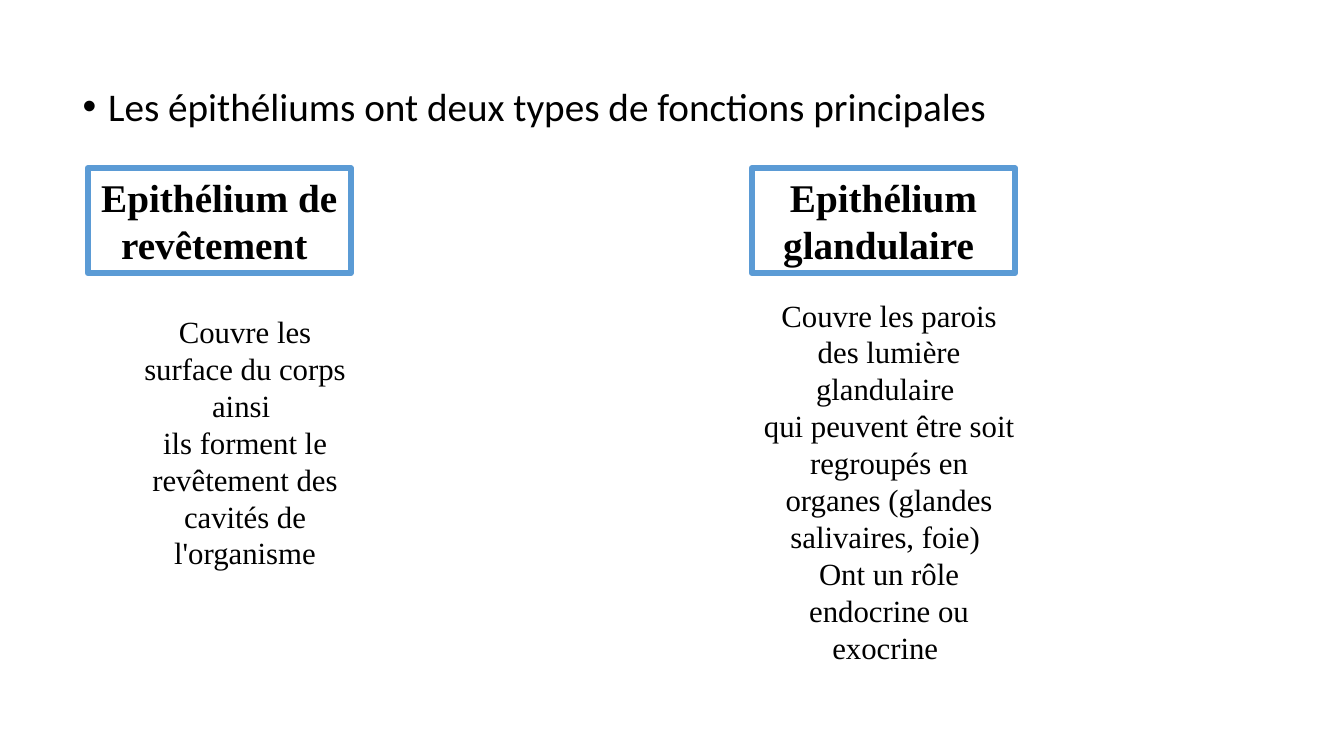
"""Build a slide that compares the two main types of epithelium."""
from dataclasses import dataclass

import pptx
import pptx.dml.color
import pptx.enum.shapes
import pptx.enum.text
import pptx.oxml
import pptx.oxml.ns
import pptx.slide
import pptx.text.text
import pptx.util
from pptx.util import Cm

BLACK = pptx.dml.color.RGBColor(0x00, 0x00, 0x00)
WHITE = pptx.dml.color.RGBColor(0xFF, 0xFF, 0xFF)
BLUE = pptx.dml.color.RGBColor(0x5B, 0x9B, 0xD5)

SERIF = "Times New Roman"
SANS = "Calibri"
HEADING_TOP = Cm(4.24)
HEADING_WIDTH = Cm(6.63)
HEADING_HEIGHT = Cm(2.64)


@dataclass(frozen=True)
class Area:
    left: pptx.util.Length
    top: pptx.util.Length
    width: pptx.util.Length
    height: pptx.util.Length


@dataclass(frozen=True)
class Epithelium:
    heading: str
    heading_left: pptx.util.Length
    roles: tuple[str, ...]
    roles_area: Area


EPITHELIA = (
    Epithelium(
        "Epithélium de revêtement ",
        Cm(2.21),
        (
            "Couvre les surface du corps ainsi ",
            "ils forment le revêtement des cavités de l'organisme",
        ),
        Area(Cm(3.05), Cm(7.75), Cm(6.25), Cm(6.83)),
    ),
    Epithelium(
        "Epithélium glandulaire ",
        Cm(18.95),
        (
            "Couvre les parois des lumière glandulaire ",
            "qui peuvent être soit regroupés en organes (glandes salivaires, foie) ",
            "Ont un rôle endocrine ou exocrine ",
        ),
        Area(Cm(18.95), Cm(7.34), Cm(6.91), Cm(9.65)),
    ),
)


def set_font(paragraph: pptx.text.text._Paragraph, name: str, size: int, bold: bool = False) -> None:
    """Give a paragraph its black font."""
    paragraph.font.name = name
    paragraph.font.size = pptx.util.Pt(size)
    paragraph.font.bold = bold
    paragraph.font.color.rgb = BLACK


def write_centred(frame: pptx.text.text.TextFrame, lines: tuple[str, ...], size: int, bold: bool = False) -> None:
    """Write one centred serif paragraph per line."""
    frame.word_wrap = True
    frame.text = "\n".join(lines)
    for paragraph in frame.paragraphs:
        paragraph.alignment = pptx.enum.text.PP_ALIGN.CENTER
        set_font(paragraph, SERIF, size, bold)


def write_statement(slide: pptx.slide.Slide, text: str) -> None:
    """Put the bulleted opening statement in the body placeholder."""
    statement = slide.placeholders[1]
    statement.left, statement.top = Cm(1.83), Cm(0.64)
    statement.width, statement.height = Cm(29.21), Cm(3.3)
    frame = statement.text_frame
    frame.auto_size = pptx.enum.text.MSO_AUTO_SIZE.NONE
    frame.margin_top = Cm(1.56)
    frame.text = text
    paragraph = frame.paragraphs[0]
    paragraph.line_spacing = 0.9
    paragraph.space_before = pptx.util.Pt(0)
    set_font(paragraph, SANS, 28)
    properties = paragraph._p.get_or_add_pPr()
    properties.set("marL", str(Cm(0.64)))
    properties.set("indent", str(-Cm(0.64)))
    namespace = pptx.oxml.ns.nsdecls("a")
    properties.append(pptx.oxml.parse_xml(f'<a:buFont {namespace} typeface="Arial"/>'))
    properties.append(pptx.oxml.parse_xml(f'<a:buChar {namespace} char="•"/>'))
    default_font = properties.find(pptx.oxml.ns.qn("a:defRPr"))
    properties.append(default_font)


def draw_epithelium(slide: pptx.slide.Slide, epithelium: Epithelium) -> None:
    """Draw the framed heading and the roles below it."""
    heading = slide.shapes.add_shape(
        pptx.enum.shapes.MSO_SHAPE.RECTANGLE,
        epithelium.heading_left, HEADING_TOP, HEADING_WIDTH, HEADING_HEIGHT,
    )
    heading.shadow.inherit = False
    heading.fill.solid()
    heading.fill.fore_color.rgb = WHITE
    heading.line.color.rgb = BLUE
    heading.line.width = pptx.util.Pt(4.5)
    write_centred(heading.text_frame, (epithelium.heading,), 28, bold=True)

    area = epithelium.roles_area
    roles = slide.shapes.add_textbox(area.left, area.top, area.width, area.height)
    write_centred(roles.text_frame, epithelium.roles, 22)


def main() -> None:
    """Build and save the presentation."""
    presentation = pptx.Presentation()
    presentation.slide_width, presentation.slide_height = Cm(33.87), Cm(19.05)
    slide = presentation.slides.add_slide(presentation.slide_layouts[1])
    unused_title = slide.shapes.title.element
    unused_title.getparent().remove(unused_title)
    write_statement(slide, "Les épithéliums ont deux types de fonctions principales")
    for epithelium in EPITHELIA:
        draw_epithelium(slide, epithelium)
    presentation.save("out.pptx")


if __name__ == "__main__":
    main()
